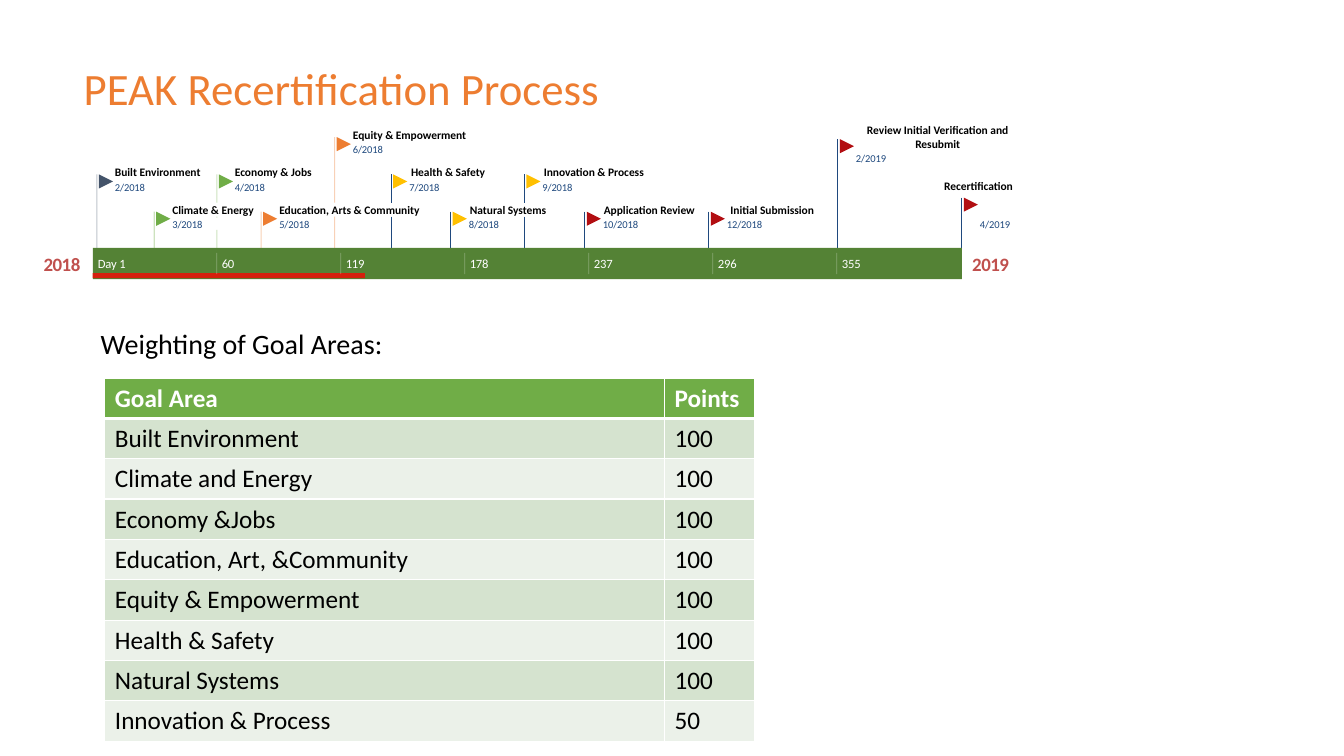
import pptx
import pptx.util
from lxml import etree
from pptx.dml.color import RGBColor
from pptx.enum.shapes import MSO_CONNECTOR, MSO_SHAPE
from pptx.enum.text import MSO_ANCHOR, MSO_AUTO_SIZE, PP_ALIGN
from pptx.oxml.ns import qn
from pptx.util import Inches

BLACK = RGBColor(0x00, 0x00, 0x00)
WHITE = RGBColor(0xFF, 0xFF, 0xFF)
SLATE = RGBColor(0x44, 0x54, 0x6A)
GREEN = RGBColor(0x70, 0xAD, 0x47)
DARK_GREEN = RGBColor(0x54, 0x82, 0x35)
ORANGE = RGBColor(0xED, 0x7D, 0x31)
GOLD = RGBColor(0xFF, 0xC0, 0x00)
CRIMSON = RGBColor(0xB2, 0x0E, 0x12)
RED = RGBColor(0xFF, 0x00, 0x00)
BRICK = RGBColor(0xC0, 0x50, 0x4D)
NAVY = RGBColor(0x1F, 0x49, 0x7E)
BAND_DARK = RGBColor(0xD5, 0xE3, 0xCF)
BAND_LIGHT = RGBColor(0xEB, 0xF1, 0xE9)

LEFT, CENTER = PP_ALIGN.LEFT, PP_ALIGN.CENTER
BAR_LEFT, BAR_TOP, BAR_WIDTH, BAR_HEIGHT = 0.92, 2.46, 8.62, 0.31
TICK_STEP, DAYS_PER_TICK = 1.23, 59
TOP_ROW, MIDDLE_ROW, LOW_ROW = 1.36, 1.73, 2.1
LABEL_GAP = (2.01, 2.15)
DATE_GAP = (2.16, 2.28)

# title, date, stem x, flag top, title width, align, flag colour, stem colour, stem opacity, stem gaps
MILESTONES = [
    ("Built Environment", "2/2018", 0.96, MIDDLE_ROW, 0.9, LEFT, SLATE, SLATE, 35, []),
    ("Climate & Energy", "3/2018", 1.53, LOW_ROW, 0.86, LEFT, GREEN, GREEN, 35, []),
    ("Economy & Jobs", "4/2018", 2.15, MIDDLE_ROW, 0.8, LEFT, GREEN, GREEN, 35,
     [LABEL_GAP, DATE_GAP]),
    ("Education, Arts & Community", "5/2018", 2.59, LOW_ROW, 1.45, LEFT, ORANGE, ORANGE, 35, []),
    ("Equity & Empowerment", "6/2018", 3.32, TOP_ROW, 1.18, LEFT, ORANGE, ORANGE, 35, [LABEL_GAP]),
    ("Health & Safety", "7/2018", 3.88, MIDDLE_ROW, 0.77, CENTER, GOLD, NAVY, 100, [LABEL_GAP]),
    ("Natural Systems", "8/2018", 4.47, LOW_ROW, 0.78, CENTER, GOLD, NAVY, 100, []),
    ("Innovation & Process", "9/2018", 5.2, MIDDLE_ROW, 1.02, CENTER, GOLD, NAVY, 100, [LABEL_GAP]),
    ("Application Review", "10/2018", 5.8, LOW_ROW, 0.92, CENTER, CRIMSON, NAVY, 100, []),
    ("Initial Submission", "12/2018", 7.03, LOW_ROW, 0.9, CENTER, CRIMSON, NAVY, 100, []),
    ("Review Initial Verification and Resubmit", "2/2019", 8.31, 1.38, 1.62, CENTER,
     CRIMSON, NAVY, 100, []),
    ("Recertification", "4/2019", 9.54, 1.96, 0.87, CENTER, CRIMSON, NAVY, 100, []),
]
# Labels placed apart from the rule: title left, top, height, then date left, top
SPECIAL_LABELS = {
    "2/2019": (8.49, 1.22, 0.28, 8.49, 1.51),
    "4/2019": (9.27, 1.77, 0.14, 9.72, 2.16),
}

GOAL_ROWS = [
    ("Goal Area", "Points"),
    ("Built Environment", "100"),
    ("Climate and Energy", "100"),
    ("Economy &Jobs", "100"),
    ("Education, Art, &Community", "100"),
    ("Equity & Empowerment", "100"),
    ("Health & Safety", "100"),
    ("Natural Systems", "100"),
    ("Innovation & Process", "50"),
]


def write(tf, text, size=18, color=BLACK, bold=False, align=LEFT, spacing=0):
    """Put one formatted run in a text frame; spacing is in points."""
    p = tf.paragraphs[0]
    p.alignment = align
    r = p.add_run()
    r.text = text
    r.font.name = "Calibri"
    r.font.size = pptx.util.Pt(size)
    r.font.bold = bold
    r.font.color.rgb = color
    if spacing:
        r.font._element.set("spc", str(round(spacing * 100)))


def set_opacity(element, percent):
    color = element.find(".//" + qn("a:srgbClr"))
    etree.SubElement(color, qn("a:alpha")).set("val", str(percent * 1000))


class SlideBuilder:
    def __init__(self, prs):
        self.s = prs.slides.add_slide(prs.slide_layouts[5])

    def title(self, text, left, top, width, height):
        sp = self.s.shapes.title
        sp.left, sp.top, sp.width, sp.height = map(Inches, (left, top, width, height))
        tf = sp.text_frame
        tf.auto_size = MSO_AUTO_SIZE.NONE
        tf.vertical_anchor = MSO_ANCHOR.TOP
        write(tf, text, size=32, color=ORANGE)

    def text(self, text, left, top, width, height, wrap=False, margin=0,
             anchor=MSO_ANCHOR.MIDDLE, **style):
        sp = self.s.shapes.add_textbox(*map(Inches, (left, top, width, height)))
        tf = sp.text_frame
        tf.word_wrap = wrap
        tf.vertical_anchor = anchor
        if margin is not None:
            tf.margin_left = tf.margin_right = tf.margin_top = tf.margin_bottom = Inches(margin)
        write(tf, text, **style)

    def shape(self, kind, left, top, width, height, color, opacity=100, rotation=0):
        sp = self.s.shapes.add_shape(kind, *map(Inches, (left, top, width, height)))
        sp.shadow.inherit = False
        sp.rotation = rotation
        sp.fill.solid()
        sp.fill.fore_color.rgb = color
        sp.line.fill.background()
        if opacity < 100:
            set_opacity(sp._element.spPr, opacity)

    def vertical_line(self, x, top, bottom, color, weight, opacity=100):
        line = self.s.shapes.add_connector(
            MSO_CONNECTOR.STRAIGHT, *map(Inches, (x, top, x, bottom)))
        line.line.color.rgb = color
        line.line.width = pptx.util.Pt(weight)
        spPr = line._element.spPr
        if opacity < 100:
            set_opacity(spPr, opacity)
        etree.SubElement(spPr, qn("a:effectLst"))

    def stem(self, x, top, gaps, color, opacity):
        """Draw a milestone's stem down to the bar, broken where labels cross it."""
        for gap_top, gap_bottom in gaps + [(BAR_TOP, BAR_TOP)]:
            self.vertical_line(x, top, gap_top, color, 0.75, opacity)
            top = gap_bottom

    def flag(self, title, date, x, top, width, align, color):
        rule = (x + 0.18, top - 0.09, 0.14, x + 0.18, top + 0.06)
        title_x, title_y, height, date_x, date_y = SPECIAL_LABELS.get(date, rule)
        self.text(title, title_x, title_y, width, height, wrap=True,
                  size=8.2, bold=True, align=align)
        self.text(date, date_x, date_y, 0.46, 0.13, wrap=True,
                  size=7.5, color=NAVY, spacing=-0.1)
        self.shape(MSO_SHAPE.FLOWCHART_MERGE, x + 0.02, top, 0.14, 0.14, color, rotation=270)

    def cell_borders(self, cell, bottom_weight):
        tcPr = cell._tc.get_or_add_tcPr()
        weights = {"a:lnL": 1, "a:lnR": 1, "a:lnT": 1, "a:lnB": bottom_weight}
        for index, (tag, weight) in enumerate(weights.items()):
            ln = etree.Element(qn(tag), w=str(pptx.util.Pt(weight)))
            fill = etree.SubElement(ln, qn("a:solidFill"))
            etree.SubElement(fill, qn("a:srgbClr")).set("val", str(WHITE))
            tcPr.insert(index, ln)

    def table(self, rows, left, top, col_widths, row_height):
        table = self.s.shapes.add_table(
            len(rows), len(col_widths), Inches(left), Inches(top),
            Inches(sum(col_widths)), Inches(row_height * len(rows))).table
        for column, width in zip(table.columns, col_widths):
            column.width = Inches(width)
        for i, row in enumerate(rows):
            header = i == 0
            for j, value in enumerate(row):
                cell = table.cell(i, j)
                cell.fill.solid()
                cell.fill.fore_color.rgb = GREEN if header else (BAND_LIGHT, BAND_DARK)[i % 2]
                write(cell.text_frame, value, color=WHITE if header else BLACK, bold=header)
                self.cell_borders(cell, 3 if header else 1)


def main():
    prs = pptx.Presentation()
    prs.slide_width, prs.slide_height = Inches(13.33), Inches(7.5)
    b = SlideBuilder(prs)
    b.title("PEAK Recertification Process", 0.73, 0.55, 5.67, 0.64)

    for _, _, x, top, _, _, _, stem_color, opacity, gaps in MILESTONES:
        b.stem(x, top, gaps, stem_color, opacity)
    for year, x in (("2018", 0.43), ("2019", 9.64)):
        b.text(year, x, 2.5, 0.37, 0.23, size=13.5, color=BRICK, bold=True,
               align=CENTER, spacing=-0.3)
    b.shape(MSO_SHAPE.RECTANGLE, BAR_LEFT, BAR_TOP, BAR_WIDTH, BAR_HEIGHT, DARK_GREEN)
    b.shape(MSO_SHAPE.RECTANGLE, BAR_LEFT, 2.71, 2.7, 0.05, RED, opacity=75)
    for i in range(7):
        x = BAR_LEFT + TICK_STEP * i
        day = str(1 + DAYS_PER_TICK * i)
        if i:
            b.vertical_line(x, 2.51, 2.72, WHITE, 0.5, opacity=30)
        b.text(day if i else f"Day {day}", x + 0.05, 2.54, 0.4, 0.15, wrap=True,
               size=9, color=WHITE, spacing=-0.1)
    for title, date, x, top, width, align, color, *_ in MILESTONES:
        b.flag(title, date, x, top, width, align, color)

    b.table(GOAL_ROWS, 1.04, 3.75, (5.55, 0.89), 0.4)
    b.text("Weighting of Goal Areas:", 0.9, 3.19, 3.09, 0.44, margin=None,
           anchor=MSO_ANCHOR.TOP, size=20)
    prs.save("out.pptx")


if __name__ == "__main__":
    main()
